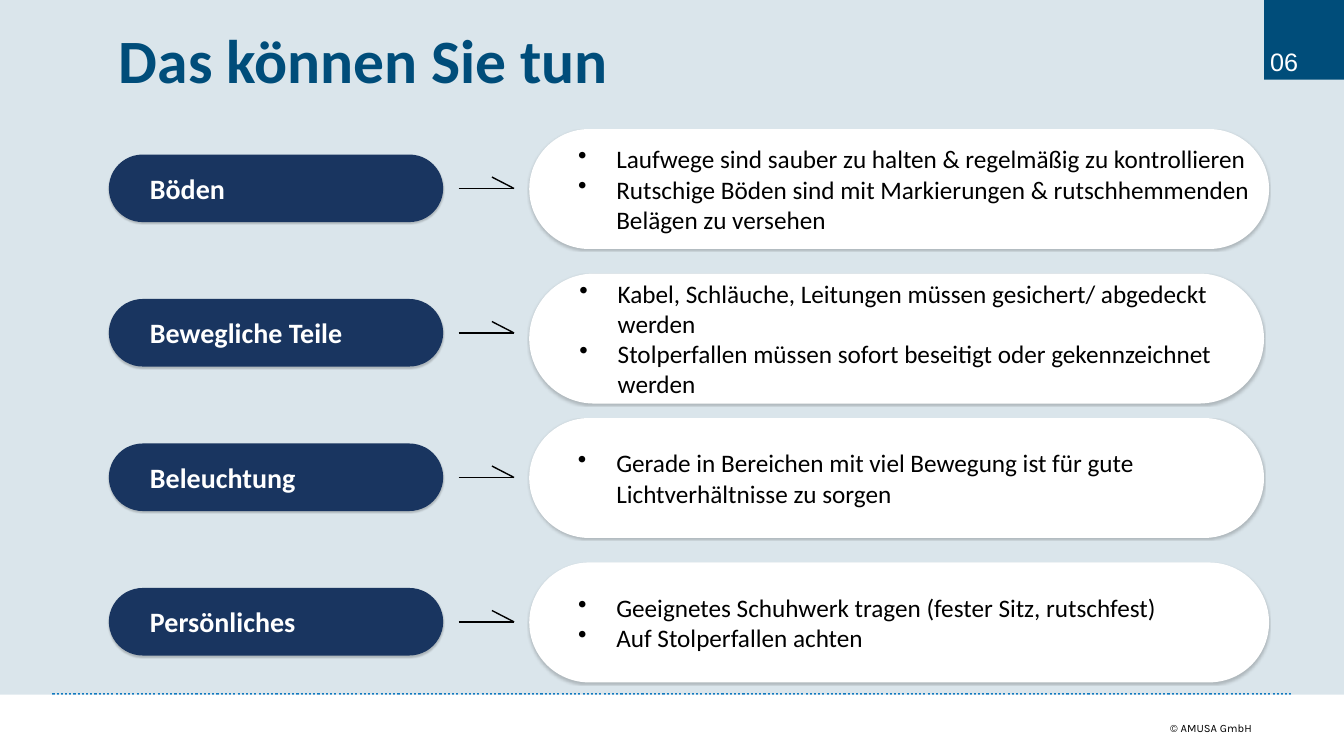
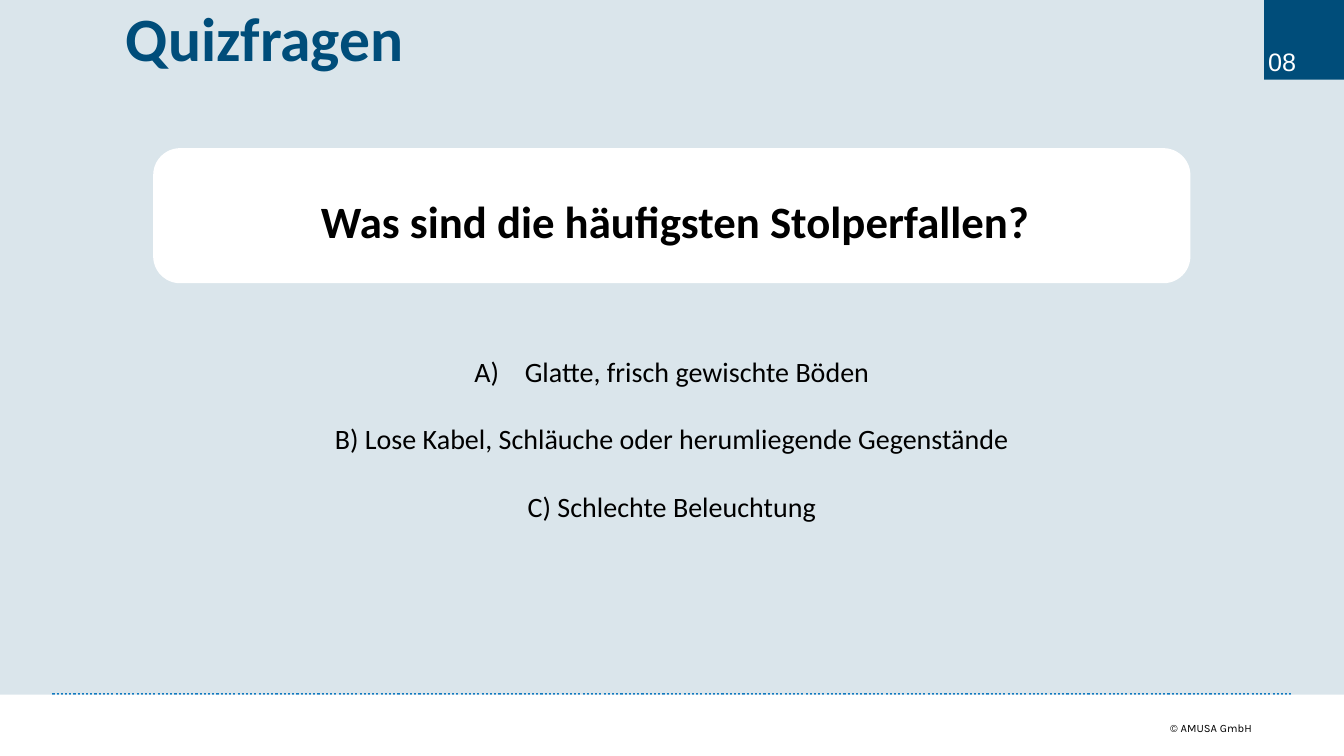
from dataclasses import dataclass
from typing import Optional

from lxml import etree
from pptx import Presentation
from pptx.dml.color import RGBColor
from pptx.enum.dml import MSO_LINE
from pptx.enum.shapes import MSO_CONNECTOR, MSO_SHAPE
from pptx.enum.text import MSO_ANCHOR, MSO_AUTO_SIZE, PP_ALIGN
from pptx.oxml.ns import qn
from pptx.util import Emu, Inches, Pt

RECTANGLE = MSO_SHAPE.RECTANGLE
ROUNDED = MSO_SHAPE.ROUNDED_RECTANGLE
STRAIGHT = MSO_CONNECTOR.STRAIGHT
DOTTED = MSO_LINE.ROUND_DOT
LEFT, CENTER, RIGHT = PP_ALIGN.LEFT, PP_ALIGN.CENTER, PP_ALIGN.RIGHT
TOP, MIDDLE = MSO_ANCHOR.TOP, MSO_ANCHOR.MIDDLE
NO_FIT = MSO_AUTO_SIZE.NONE

SLIDE_WIDTH, SLIDE_HEIGHT = Inches(13.33), Inches(7.5)
COLUMNS, ROWS = 40, 22.5
TITLE_ONLY = 5

BACKGROUND = "DAE5EB"
PETROL = "004D7A"
NAVY = "193560"
DOT_BLUE = "1179BF"
WHITE = "FFFFFF"
BLACK = "000000"

FOOTER_ROW = 20.67
ROW_PITCH = 4.3
NO_INSETS = (0, 0, 0, 0)
BOX_INSETS = (0.1, 0.05, 0.1, 0.05)
PILL_INSETS = (0.31, 0, 0, 0)


@dataclass(frozen=True)
class Area:
    column: float
    row: float
    columns: float
    rows: float

    def emu(self) -> tuple[Emu, Emu, Emu, Emu]:
        return across(self.column), down(self.row), across(self.columns), down(self.rows)


@dataclass(frozen=True)
class TextStyle:
    size: float
    color: str = BLACK
    font: str = "Calibri"
    bold: bool = False
    align: PP_ALIGN = LEFT
    line_spacing: Optional[float] = None
    space_before: float = 0


@dataclass(frozen=True)
class Measure:
    topic: str
    advice: tuple[str, ...]
    columns: float
    rows: float = 3.57


TITLE = TextStyle(44, PETROL, bold=True, line_spacing=Pt(32))
COPYRIGHT = TextStyle(8, font="Karla", align=RIGHT, line_spacing=Pt(10.7))
PAGE_NUMBER = TextStyle(18, WHITE, "Arial")
TOPIC = TextStyle(20, WHITE, bold=True)
ADVICE = TextStyle(18)
QUESTION = TextStyle(32, bold=True, align=CENTER, line_spacing=1.2)
ANSWER = TextStyle(20, align=CENTER, space_before=24)

MEASURES = (
    Measure("Böden", (
        "Laufwege sind sauber zu halten & regelmäßig zu kontrollieren",
        "Rutschige Böden sind mit Markierungen & rutschhemmenden Belägen zu versehen",
    ), 22.02),
    Measure("Bewegliche Teile", (
        "Kabel, Schläuche, Leitungen müssen gesichert/ abgedeckt werden",
        "Stolperfallen müssen sofort beseitigt oder gekennzeichnet werden",
    ), 21.87, 3.87),
    Measure("Beleuchtung", (
        "Gerade in Bereichen mit viel Bewegung ist für gute Lichtverhältnisse zu sorgen",
    ), 21.87),
    Measure("Persönliches", (
        "Geeignetes Schuhwerk tragen (fester Sitz, rutschfest)",
        "Auf Stolperfallen achten",
    ), 22.02),
)
ANSWERS = (
    "Glatte, frisch gewischte Böden",
    "B) Lose Kabel, Schläuche oder herumliegende Gegenstände",
    "C) Schlechte Beleuchtung",
)


def across(columns: float) -> Emu:
    return Emu(round(SLIDE_WIDTH * columns / COLUMNS))


def down(rows: float) -> Emu:
    return Emu(round(SLIDE_HEIGHT * rows / ROWS))


def rgb(color: str) -> RGBColor:
    return RGBColor.from_string(color)


def prepare_frame(frame, insets, anchor=TOP, wrap: bool = True) -> None:
    frame.auto_size = NO_FIT
    frame.word_wrap = wrap
    frame.vertical_anchor = anchor
    left, top, right, bottom = map(Inches, insets)
    frame.margin_left, frame.margin_top = left, top
    frame.margin_right, frame.margin_bottom = right, bottom


def add_mark(paragraph, tag: str, attribute: str, value: str, indent: float) -> None:
    properties = paragraph._p.get_or_add_pPr()
    properties.set("marL", str(Inches(indent)))
    properties.set("indent", str(-Inches(indent)))
    etree.SubElement(properties, qn(tag)).set(attribute, value)


def write(frame, lines: tuple[str, ...], style: TextStyle, bulleted: bool = False) -> None:
    for index, line in enumerate(lines):
        paragraph = frame.paragraphs[0] if index == 0 else frame.add_paragraph()
        paragraph.alignment = style.align
        if style.line_spacing:
            paragraph.line_spacing = style.line_spacing
        paragraph.space_before = Pt(style.space_before if index else 0)
        if bulleted:
            add_mark(paragraph, "a:buChar", "char", "•", 0.38)
        run = paragraph.add_run()
        run.text = line
        run.font.size = Pt(style.size)
        run.font.name = style.font
        run.font.bold = style.bold
        run.font.color.rgb = rgb(style.color)


def add_panel(slide, area: Area, fill: str, kind=RECTANGLE, rounding: float = 0,
              shaded: bool = False):
    panel = slide.shapes.add_shape(kind, *area.emu())
    if rounding:
        panel.adjustments[0] = rounding
    panel.fill.solid()
    panel.fill.fore_color.rgb = rgb(fill)
    panel.line.fill.background()
    panel.shadow.inherit = False
    if shaded:
        effects = panel._element.spPr.find(qn("a:effectLst"))
        shade = etree.SubElement(effects, qn("a:outerShdw"), blurRad=str(Pt(1)),
                                 dist=str(Pt(1)), dir="5400000", rotWithShape="0")
        tint = etree.SubElement(shade, qn("a:srgbClr"), val=BLACK)
        etree.SubElement(tint, qn("a:alpha"), val="20000")
    return panel


def add_text(slide, area: Area, lines: tuple[str, ...], style: TextStyle,
             insets=NO_INSETS, anchor=TOP, wrap: bool = True):
    frame = slide.shapes.add_textbox(*area.emu()).text_frame
    prepare_frame(frame, insets, anchor, wrap)
    write(frame, lines, style)
    return frame


def add_line(slide, start: tuple[float, float], end: tuple[float, float],
             color: str, width: float, dash=None) -> None:
    line = slide.shapes.add_connector(STRAIGHT, across(start[0]), down(start[1]),
                                      across(end[0]), down(end[1]))
    line.line.color.rgb = rgb(color)
    line.line.width = Pt(width)
    if dash is not None:
        line.line.dash_style = dash
    etree.SubElement(line._element.spPr, qn("a:effectLst"))


def add_page(deck, heading: str, heading_area: Area, number: str, number_column: float):
    slide = deck.slides.add_slide(deck.slide_layouts[TITLE_ONLY])
    slide.background.fill.solid()
    slide.background.fill.fore_color.rgb = rgb(BACKGROUND)
    add_line(slide, (1.56, FOOTER_ROW), (38.43, FOOTER_ROW), DOT_BLUE, 1.5, DOTTED)
    add_panel(slide, Area(0, FOOTER_ROW, COLUMNS, ROWS - FOOTER_ROW), WHITE)
    add_text(slide, Area(33.33, 21.42, 3.93, 0.42), ("© AMUSA GmbH",), COPYRIGHT,
             anchor=MIDDLE)
    title = slide.shapes.title
    title.left, title.top, title.width, title.height = heading_area.emu()
    prepare_frame(title.text_frame, BOX_INSETS)
    write(title.text_frame, (heading,), TITLE)
    add_panel(slide, Area(37.62, 0, 2.38, 2.37), PETROL)
    add_text(slide, Area(number_column, 1.38, 0.9, 0.9), (number,), PAGE_NUMBER, wrap=False)
    return slide


def add_arrow(slide, row: float) -> None:
    tip = (15.3, row)
    add_line(slide, (13.65, row), tip, BLACK, 1)
    add_line(slide, tip, (14.64, row - 0.34), BLACK, 1)


def add_measure(slide, measure: Measure, offset: float) -> None:
    pill = add_panel(slide, Area(3.24, 4.6 + offset, 9.95, 2.01), NAVY, ROUNDED, 0.5, True)
    prepare_frame(pill.text_frame, PILL_INSETS, MIDDLE)
    write(pill.text_frame, (measure.topic,), TOPIC)
    advice = add_panel(slide, Area(15.75, 3.84 + offset, measure.columns, measure.rows),
                       WHITE, ROUNDED, 0.5, True)
    prepare_frame(advice.text_frame, PILL_INSETS, MIDDLE)
    write(advice.text_frame, measure.advice, ADVICE, bulleted=True)
    add_arrow(slide, 5.61 + offset)


def build_measures(deck) -> None:
    slide = add_page(deck, "Das können Sie tun", Area(3.24, 1.38, 26.46, 1.68), "06", 37.8)
    for index, measure in enumerate(MEASURES):
        add_measure(slide, measure, index * ROW_PITCH)


def build_quiz(deck) -> None:
    slide = add_page(deck, "Quizfragen", Area(3.45, 0.72, 26.46, 1.68), "08", 37.74)
    question = add_panel(slide, Area(4.56, 4.41, 30.87, 4.02), WHITE, ROUNDED, 0.2)
    prepare_frame(question.text_frame, (0.17, 0, 0.1, 0), MIDDLE)
    write(question.text_frame, ("Was sind die häufigsten Stolperfallen?",), QUESTION)
    answers = add_text(slide, Area(4.56, 10.41, 30.87, 5.34), ANSWERS, ANSWER, BOX_INSETS)
    add_mark(answers.paragraphs[0], "a:buAutoNum", "type", "alphaUcParenR", 0.5)


def main() -> None:
    deck = Presentation()
    deck.slide_width, deck.slide_height = SLIDE_WIDTH, SLIDE_HEIGHT
    build_measures(deck)
    build_quiz(deck)
    deck.save("out.pptx")


if __name__ == "__main__":
    main()
